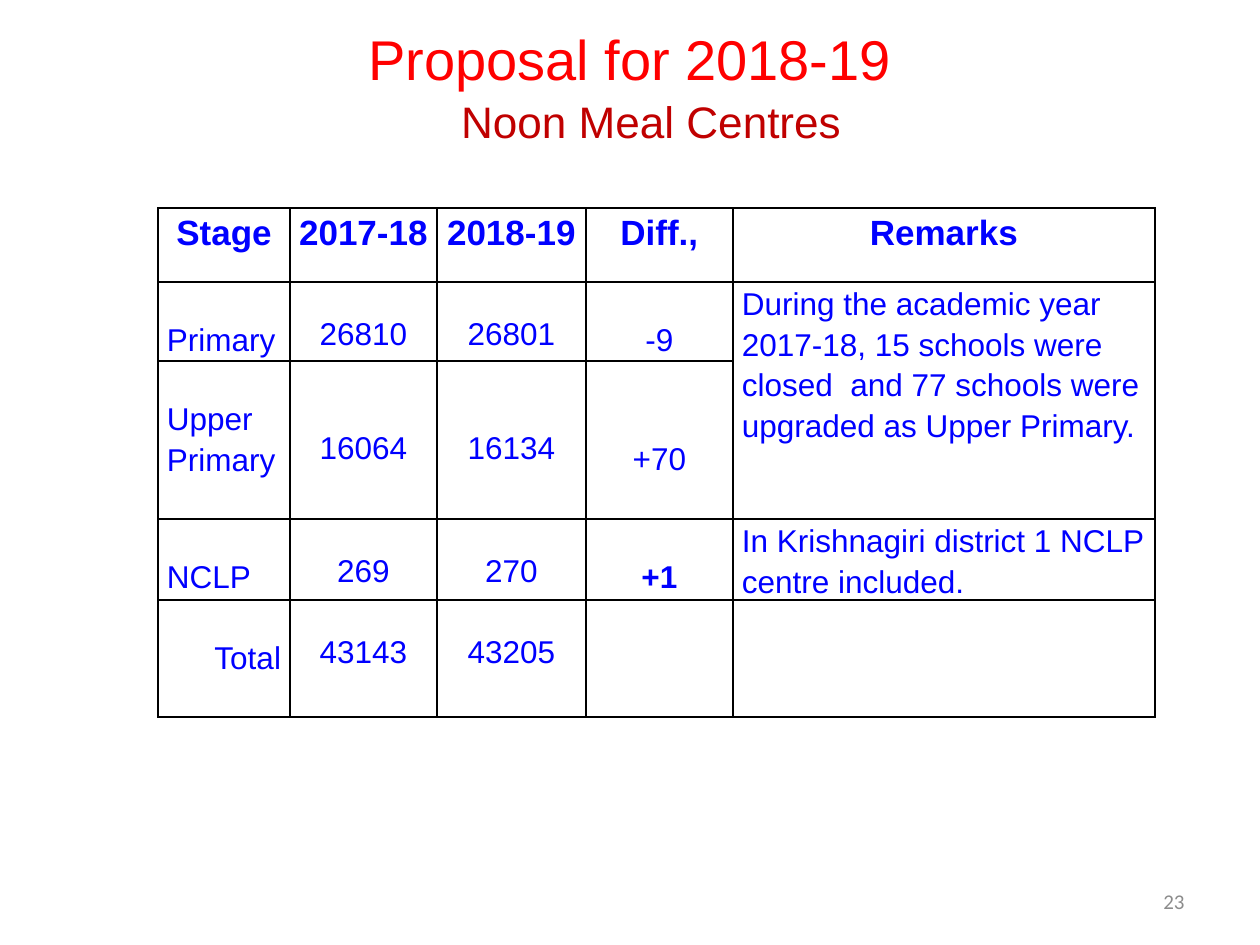
from dataclasses import dataclass

from lxml.etree import SubElement
from pptx import Presentation
from pptx.dml.color import RGBColor
from pptx.enum.text import MSO_ANCHOR as Anchor, PP_ALIGN as Align
from pptx.oxml.ns import qn
from pptx.util import Pt

PX = 914400 // 126


@dataclass(frozen=True)
class Theme:
    font: str = "Arial"
    number_font: str = "Calibri"
    heading: str = "FF0000"
    title: str = "C00000"
    table: str = "0000FF"
    border: str = "000000"
    number: str = "8C8C8C"
    heading_size: float = 32
    title_size: float = 25.2
    header_size: float = 20
    cell_size: float = 18
    number_size: float = 12


@dataclass(frozen=True)
class Cell:
    text: str = ""
    align: Align = Align.CENTER
    top: int = 0
    spacing: float = 1.15
    bold: bool = False
    size: float = Theme.cell_size


class SlideBuilder:
    def __init__(self, prs, theme):
        self.s = prs.slides.add_slide(prs.slide_layouts[5])
        self.theme = theme

    def run(self, p, text, size, color, font=None, bold=False):
        r = p.add_run()
        r.text = text
        r.font.name = font or self.theme.font
        r.font.size = Pt(size)
        r.font.bold = bold
        r.font.color.rgb = RGBColor.from_string(color)

    def fill_text(self, sp, text, size, color, align=Align.CENTER, font=None):
        tf = sp.text_frame
        tf.word_wrap = True
        tf.vertical_anchor = Anchor.MIDDLE
        p = tf.paragraphs[0]
        p.alignment = align
        self.run(p, text, size, color, font)

    def title(self, box, *text_style):
        sp = self.s.shapes.title
        sp.left, sp.top, sp.width, sp.height = (v * PX for v in box)
        self.fill_text(sp, *text_style)

    def text(self, box, *text_style):
        sp = self.s.shapes.add_textbox(*(v * PX for v in box))
        self.fill_text(sp, *text_style)

    def borders(self, cell):
        tc_pr = cell._tc.get_or_add_tcPr()
        for side in ("a:lnL", "a:lnR", "a:lnT", "a:lnB"):
            ln = SubElement(tc_pr, qn(side), w=str(Pt(1)))
            fill = SubElement(ln, qn("a:solidFill"))
            SubElement(fill, qn("a:srgbClr"), val=self.theme.border)

    def cell(self, cell, content):
        self.borders(cell)
        cell.fill.background()
        cell.margin_left = cell.margin_right = 9 * PX
        cell.margin_top, cell.margin_bottom = content.top * PX, 0
        p = cell.text_frame.paragraphs[0]
        p.alignment = content.align
        p.line_spacing = content.spacing
        p.font.size = Pt(content.size)
        if content.text:
            self.run(p, content.text, content.size, self.theme.table, bold=content.bold)

    def table(self, left, top, widths, heights, rows, merges=()):
        frame = self.s.shapes.add_table(
            len(heights), len(widths), left * PX, top * PX, sum(widths) * PX, sum(heights) * PX)
        tbl = frame.table
        tbl.first_row = tbl.horz_banding = False
        for col, width in zip(tbl.columns, widths):
            col.width = width * PX
        for row, height in zip(tbl.rows, heights):
            row.height = height * PX
        for i, row in enumerate(rows):
            for j, content in enumerate(row):
                self.cell(tbl.cell(i, j), content)
        for start, end in merges:
            tbl.cell(*start).merge(tbl.cell(*end))


def stage_row(stage, before, after, diff="", remark="", top=35, diff_top=36,
              stage_align=Align.LEFT, bold_diff=False):
    return [
        Cell(stage, stage_align, 36),
        Cell(before, top=top, spacing=1.0),
        Cell(after, top=top, spacing=1.0),
        Cell(diff, top=diff_top, bold=bold_diff),
        Cell(remark, Align.LEFT),
    ]


def main():
    prs = Presentation()
    prs.slide_width, prs.slide_height = 1260 * PX, 945 * PX
    theme = Theme()
    slide = SlideBuilder(prs, theme)

    slide.title((294, 94, 714, 53), "Noon Meal Centres", theme.title_size, theme.title)
    headers = ["Stage", "2017-18", "2018-19", "Diff.,", "Remarks"]
    rows = [
        [Cell(h, bold=True, size=theme.header_size) for h in headers],
        stage_row("Primary", "26810", "26801", "-9",
                  "During the academic year 2017-18, 15 schools were closed  and "
                  "77 schools were upgraded as Upper Primary."),
        stage_row("Upper Primary", "16064", "16134", "+70", top=70, diff_top=76),
        stage_row("NCLP", "269", "270", "+1",
                  "In Krishnagiri district 1 NCLP centre included.", bold_diff=True),
        stage_row("Total", "43143", "43205", stage_align=Align.RIGHT),
    ]
    slide.table(158, 208, [132, 147, 149, 147, 422], [74, 79, 158, 81, 117], rows,
                merges=[((1, 4), (2, 4))])
    slide.text((903, 876, 294, 50), "23", theme.number_size, theme.number,
               Align.RIGHT, theme.number_font)
    slide.text((189, 0, 882, 116), "Proposal for 2018-19", theme.heading_size, theme.heading)

    prs.save("out.pptx")


if __name__ == "__main__":
    main()
